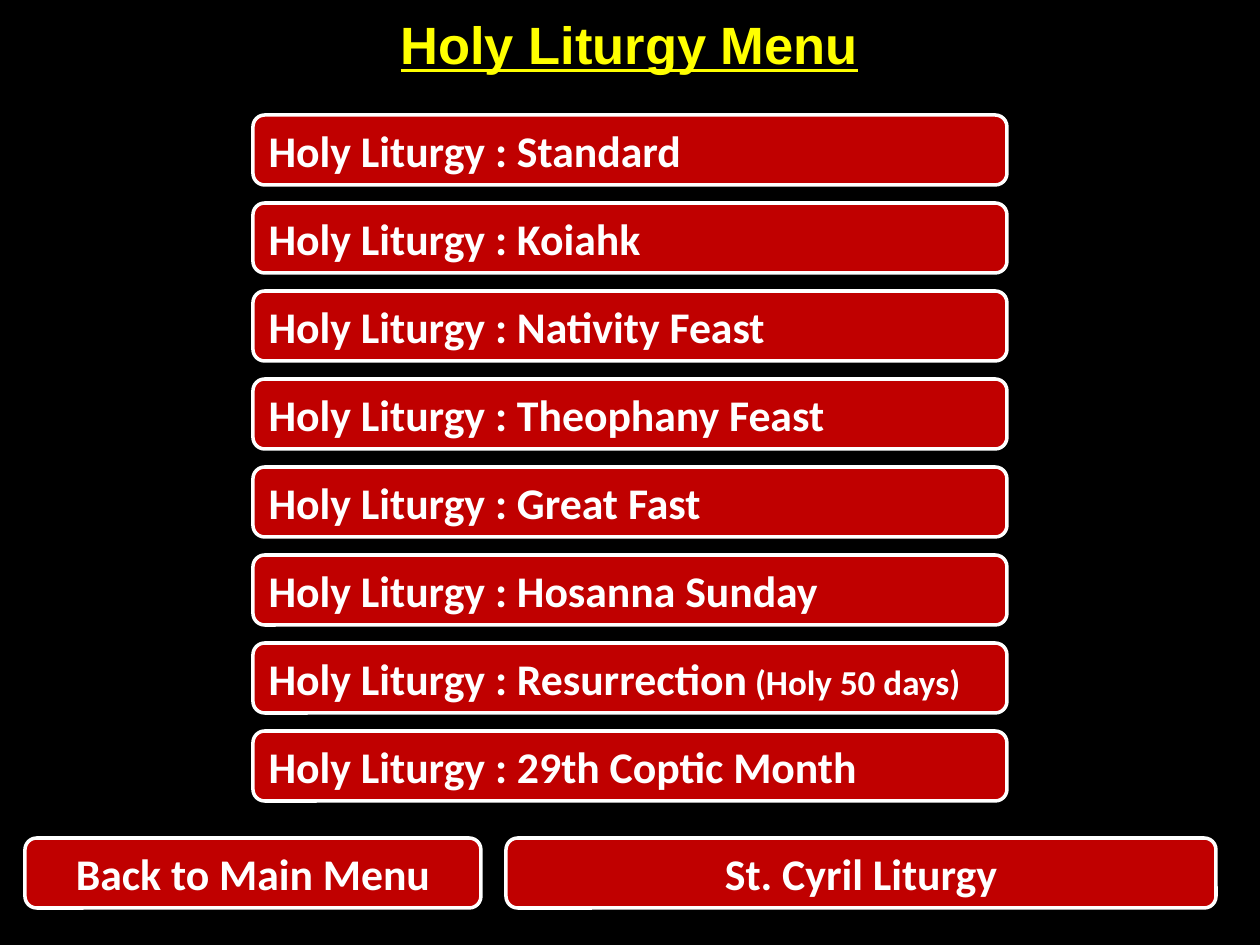
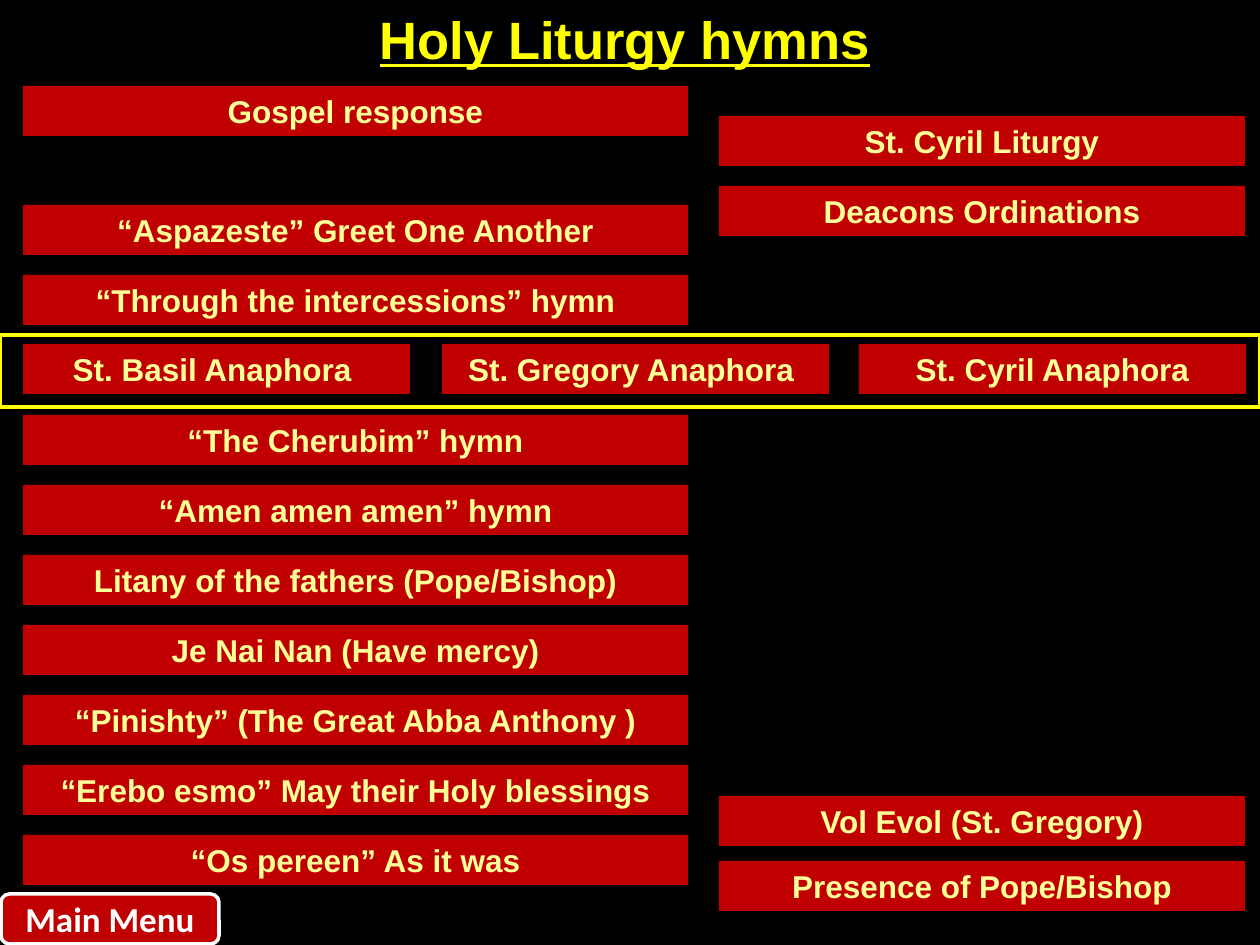
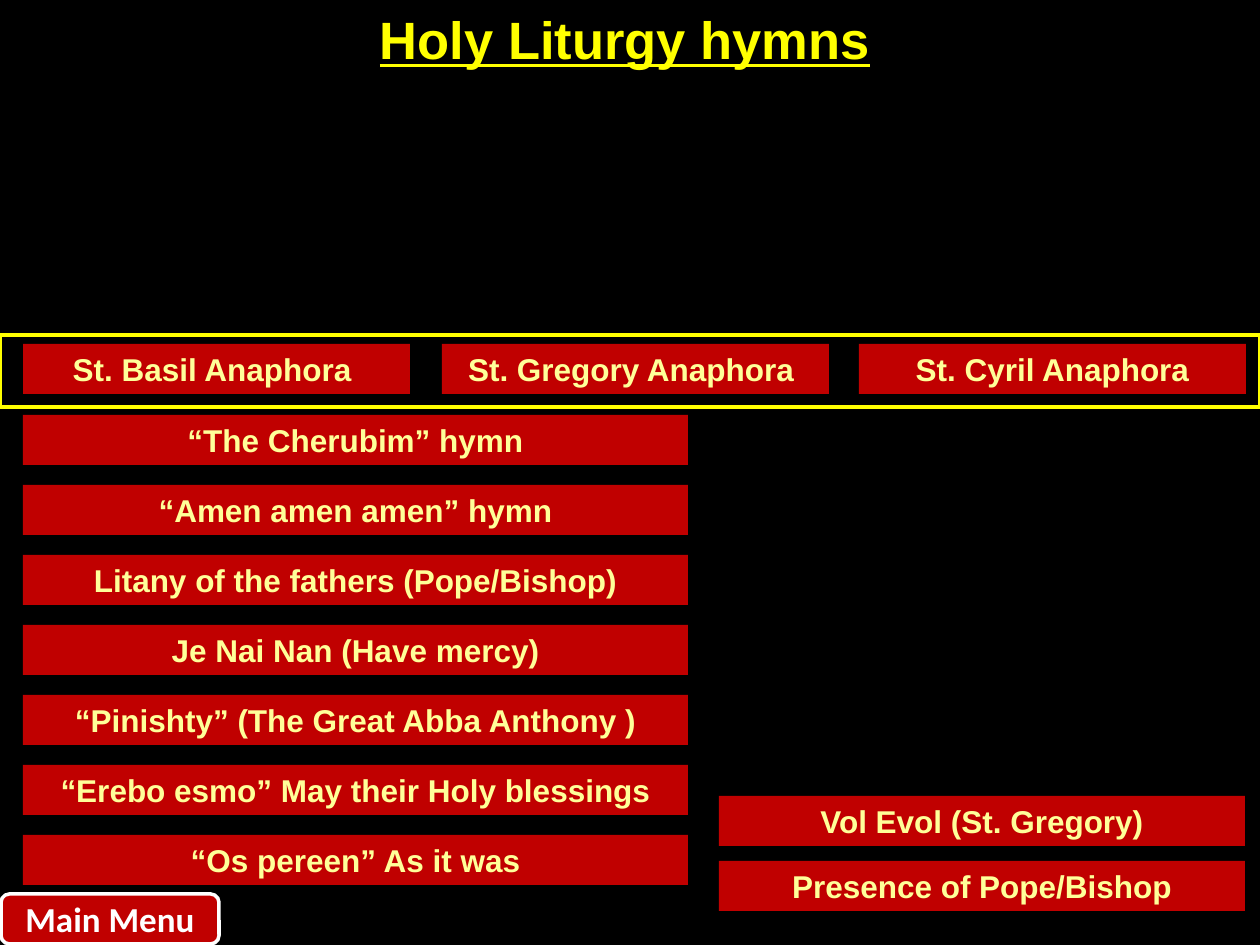
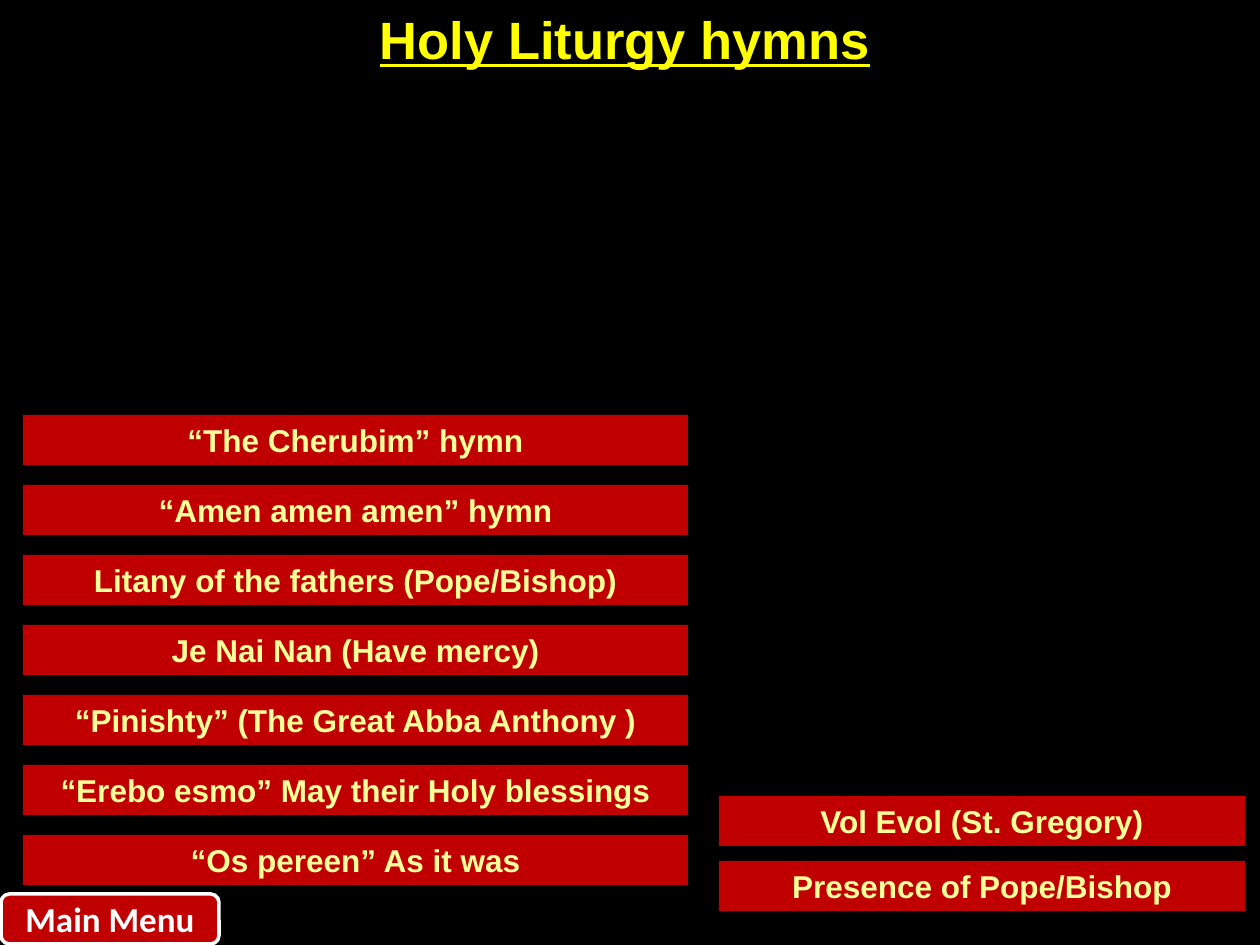
from pptx import Presentation
from pptx.dml.color import RGBColor
from pptx.enum.shapes import MSO_SHAPE as Kind
from pptx.enum.text import MSO_ANCHOR as Anchor, MSO_AUTO_SIZE as Auto, PP_ALIGN as Align
from pptx.oxml.ns import qn
from pptx.util import Emu, Pt

SCALE = 914400 / 126
WIDE, HIGH = 1260, 945
BLACK, RED, WHITE = "000000", "C00000", "FFFFFF"
YELLOW, CREAM = "FFFF00", "FFFF99"
NO_GRID = "{2D5ABB26-0587-4C30-8999-92F81FD0307C}"


def px(n):
    return Emu(round(n * SCALE))


def color(code):
    return RGBColor.from_string(code)


def write(frame, *parts, size, font, ink, align=Align.CENTER, line=False):
    para = frame.paragraphs[0]
    para.alignment = align
    for part in parts:
        text, points = part if isinstance(part, tuple) else (part, size)
        run = para.add_run()
        run.text = text
        face = run.font
        face.name, face.size, face.bold = font, Pt(points), True
        face.underline = line
        face.color.rgb = color(ink)


class Deck:
    head = dict(size=30, font="Arial", ink=YELLOW, line=True)
    item = dict(size=18, font="Arial", ink=CREAM)

    def __init__(self):
        self.show = Presentation()
        self.show.slide_width, self.show.slide_height = px(WIDE), px(HIGH)
        fill = self.show.slide_master.background.fill
        fill.solid()
        fill.fore_color.rgb = color(BLACK)
        self.slide = None

    def page(self, layout):
        self.slide = self.show.slides.add_slide(self.show.slide_layouts.get_by_name(layout))

    def title(self, text, *box):
        shape = self.slide.shapes.title
        shape.left, shape.top, shape.width, shape.height = map(px, box)
        frame = shape.text_frame
        frame.word_wrap = False
        frame.auto_size = Auto.SHAPE_TO_FIT_TEXT
        frame.vertical_anchor = Anchor.TOP
        write(frame, text, **self.head)

    def banner(self, text, *box):
        holder = self.slide.shapes.add_table(1, 1, *map(px, box))
        grid = holder.table
        grid.first_row = grid.horz_banding = False
        next(holder._element.iter(qn("a:tableStyleId"))).text = NO_GRID
        cell = grid.cell(0, 0)
        cell.fill.background()
        write(cell.text_frame, text, **self.head)

    def shape(self, kind, *box, fill=None, line=None):
        shape = self.slide.shapes.add_shape(kind, *map(px, box))
        shape.shadow.inherit = False
        if fill:
            shape.fill.solid()
            shape.fill.fore_color.rgb = color(fill)
        else:
            shape.fill.background()
        if line:
            shape.line.color.rgb = color(line)
            shape.line.width = Pt(2)
        else:
            shape.line.fill.background()
        return shape

    def button(self, *parts, box, size=25, align=Align.CENTER):
        shape = self.shape(Kind.ROUNDED_RECTANGLE, *box, fill=RED, line=WHITE)
        frame = shape.text_frame
        frame.vertical_anchor = Anchor.MIDDLE
        write(frame, *parts, size=size, font="Calibri", ink=WHITE, align=align)

    def bar(self, text, x, y, w):
        frame = self.shape(Kind.RECTANGLE, x, y, w, 50, fill=RED).text_frame
        frame.word_wrap = True
        frame.auto_size = Auto.SHAPE_TO_FIT_TEXT
        frame.vertical_anchor = Anchor.TOP
        write(frame, text, **self.item)

    def left(self, names, top):
        for i, name in enumerate(names):
            self.bar(name, 23, top + 70 * i, 665)

    def right(self, *pairs):
        for name, y in pairs:
            self.bar(name, 719, y, 526)

    def frame(self):
        self.shape(Kind.RECTANGLE, 0, 335, WIDE, 72, line=YELLOW)
        for name, x in (("St. Basil Anaphora ", 23),
                        ("St. Gregory Anaphora ", 442),
                        ("St. Cyril Anaphora", 859)):
            self.bar(name, x, 344, 387)

    def hymns(self, choice=True):
        self.page("Blank")
        self.banner("Holy Liturgy hymns", 44, 6, 1162, 110)
        if choice:
            self.frame()
        self.left(HYMNS, 415)
        self.right(("Vol Evol (St. Gregory)", 796), ("Presence of Pope/Bishop", 861))
        self.button("Main Menu", box=(1, 894, 218, 50), size=20)


HYMNS = (
    "“The Cherubim” hymn",
    "“Amen amen amen” hymn",
    "Litany of the fathers (Pope/Bishop)",
    "Je Nai Nan (Have mercy)",
    "“Pinishty” (The Great Abba Anthony )",
    "“Erebo esmo” May their Holy blessings",
    "“Os pereen” As it was",
)
FEASTS = (
    ("Standard",),
    ("Koiahk",),
    ("Nativity Feast",),
    ("Theophany Feast",),
    ("Great Fast",),
    ("Hosanna Sunday",),
    ("Resurrection", (" (Holy 50 days)", 20)),
    ("29th Coptic Month",),
)


def main():
    deck = Deck()

    deck.page("Title Only")
    deck.title("Holy Liturgy Menu", 378, 6, 503, 77)
    for i, (name, *rest) in enumerate(FEASTS):
        deck.button(f"Holy Liturgy : {name}", *rest,
                    box=(253, 115 + 88 * i, 754, 70), align=Align.LEFT)
    deck.button("Back to Main Menu", box=(25, 838, 456, 70))
    deck.button("St. Cyril Liturgy", box=(506, 838, 710, 70))

    deck.hymns()
    deck.left(("Gospel response",), 86)
    deck.left(("“Aspazeste” Greet One Another", "“Through the intercessions” hymn"), 205)
    deck.right(("St. Cyril Liturgy", 116), ("Deacons Ordinations", 186))

    deck.hymns()
    deck.hymns(choice=False)

    deck.show.save("out.pptx")


if __name__ == "__main__":
    main()
